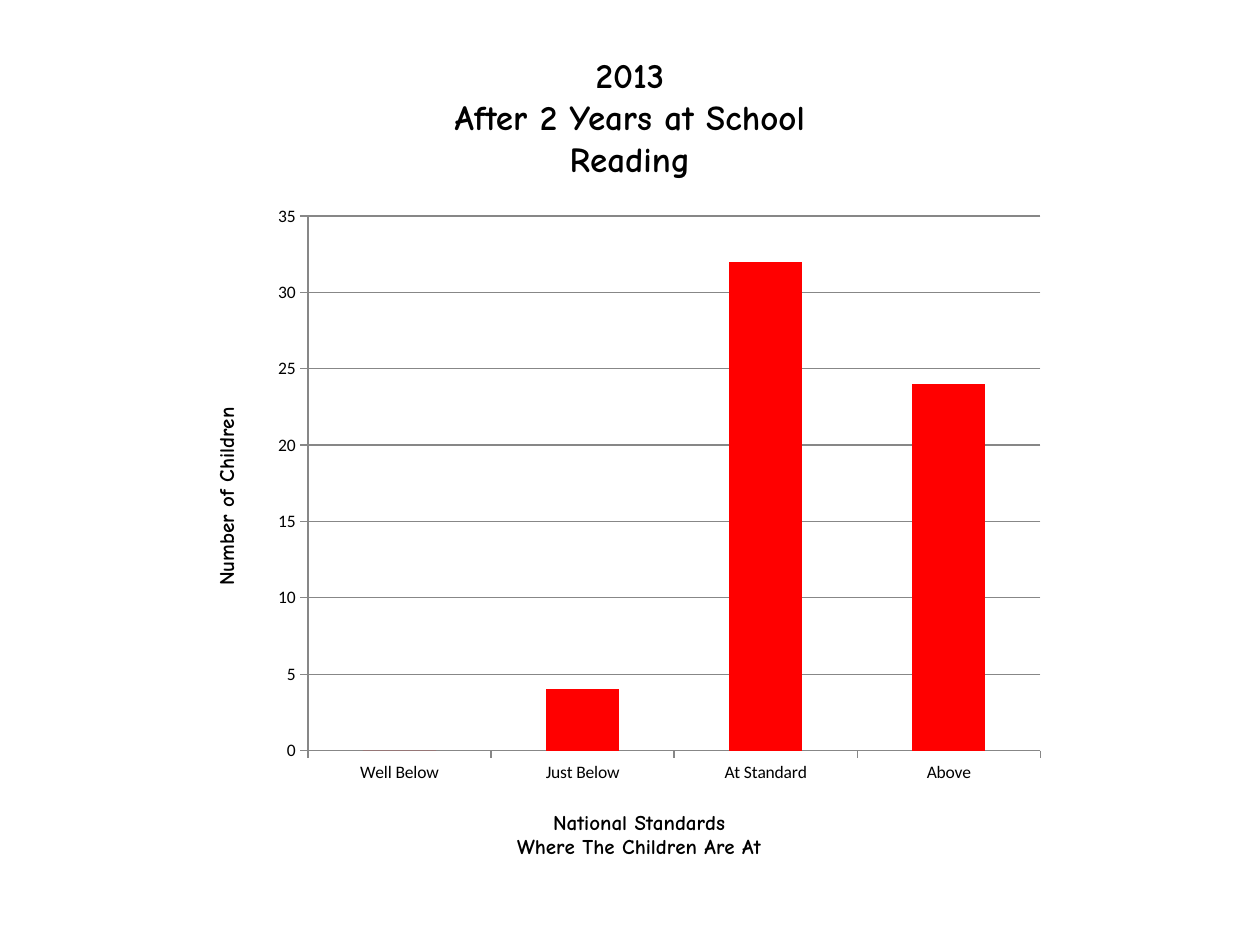
from pptx import Presentation, util as u
from pptx.chart.data import CategoryChartData
from pptx.dml.color import RGBColor
from pptx.enum import chart as ch, text
from pptx.oxml import parse_xml
from pptx.oxml.ns import nsdecls, qn

COLORS = {"text": "000000", "bar": "FF0000", "line": "878787"}


class Deck:
    heading_font = "Comic Neue"
    body_font = "Calibri"

    def __init__(self, width, height):
        self.prs = Presentation()
        self.prs.slide_width, self.prs.slide_height = u.Pt(width), u.Pt(height)
        self.s = self.prs.slides.add_slide(self.prs.slide_layouts[6])

    def color(self, name):
        return RGBColor.from_string(COLORS[name])

    def style(self, font, name, size, bold=False):
        font.name, font.size, font.bold = name, u.Pt(size), bold
        font.color.rgb = self.color("text")

    def add_lines(self, tf, lines, size):
        """Fill a frame with centred heading lines, one paragraph each."""
        for i, line in enumerate(lines):
            p = tf.add_paragraph() if i else tf.paragraphs[0]
            p.alignment = text.PP_ALIGN.CENTER
            r = p.add_run()
            r.text = line
            self.style(r.font, self.heading_font, size, True)

    def title(self, lines, box):
        tf = self.s.shapes.add_textbox(*map(u.Pt, box)).text_frame
        tf.word_wrap = True
        tf.vertical_anchor = text.MSO_ANCHOR.MIDDLE
        self.add_lines(tf, lines, 20)

    def layout(self, parent, index, inner=False, **fractions):
        """Place a chart part by fractions of the chart's size."""
        old = parent.find(qn("c:layout"))
        if old is not None:
            parent.remove(old)
        target = '<c:layoutTarget val="inner"/>' if inner else ""
        modes = '<c:xMode val="edge"/><c:yMode val="edge"/>'
        values = "".join(f'<c:{k} val="{v}"/>' for k, v in fractions.items())
        parent.insert(index, parse_xml(
            f'<c:layout {nsdecls("c")}><c:manualLayout>{target}{modes}{values}'
            '</c:manualLayout></c:layout>'))

    def axis(self, axis, lines, x, y):
        axis.major_tick_mark = ch.XL_TICK_MARK.OUTSIDE
        axis.minor_tick_mark = ch.XL_TICK_MARK.NONE
        axis.format.line.color.rgb = self.color("line")
        self.style(axis.tick_labels.font, self.body_font, 10)
        self.add_lines(axis.axis_title.text_frame, lines, 12)
        self.layout(axis.axis_title.element, 1, x=x, y=y)

    def column_chart(self, cats, vals, box):
        data = CategoryChartData()
        data.categories = cats
        data.add_series("Series 1", vals)
        chart = self.s.shapes.add_chart(
            ch.XL_CHART_TYPE.COLUMN_CLUSTERED, *map(u.Pt, box), data).chart
        chart.has_legend = chart.has_title = False
        self.style(chart.font, self.body_font, 10)
        plot = chart.plots[0]
        plot.gap_width, plot.vary_by_categories = 150, False
        fill = plot.series[0].format.fill
        fill.solid()
        fill.fore_color.rgb = self.color("bar")
        self.layout(chart.element.find(".//" + qn("c:plotArea")), 0,
                    inner=True, x=0.15, y=0.03, w=0.82, h=0.77)
        return chart


def main():
    deck = Deck(720, 540)
    deck.title(["2013", "After 2 Years at School", "Reading"],
               (36, 21.6, 648, 90))
    chart = deck.column_chart(
        ["Well Below", "Just Below", "At Standard", "Above"],
        [0, 4, 32, 24], (99.36, 111.6, 510.48, 396.72))
    deck.axis(chart.category_axis,
              ["National Standards", "Where The Children Are At"], 0.38, 0.88)
    values = chart.value_axis
    deck.axis(values, ["Number of Children"], 0.04, 0.3)
    values.minimum_scale, values.maximum_scale, values.major_unit = 0, 35, 5
    values.major_gridlines.format.line.color.rgb = deck.color("line")
    deck.prs.save("out.pptx")


if __name__ == "__main__":
    main()
